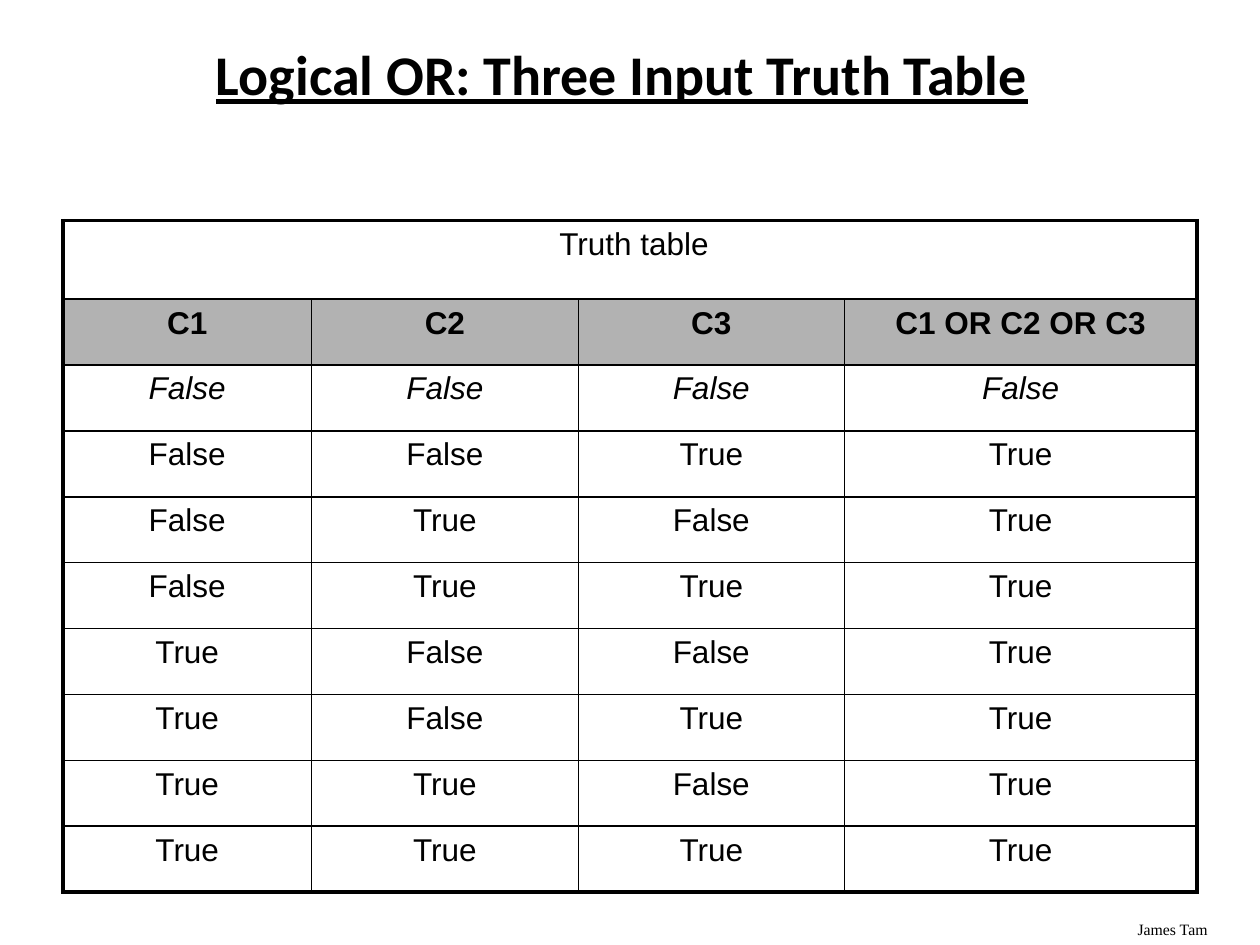
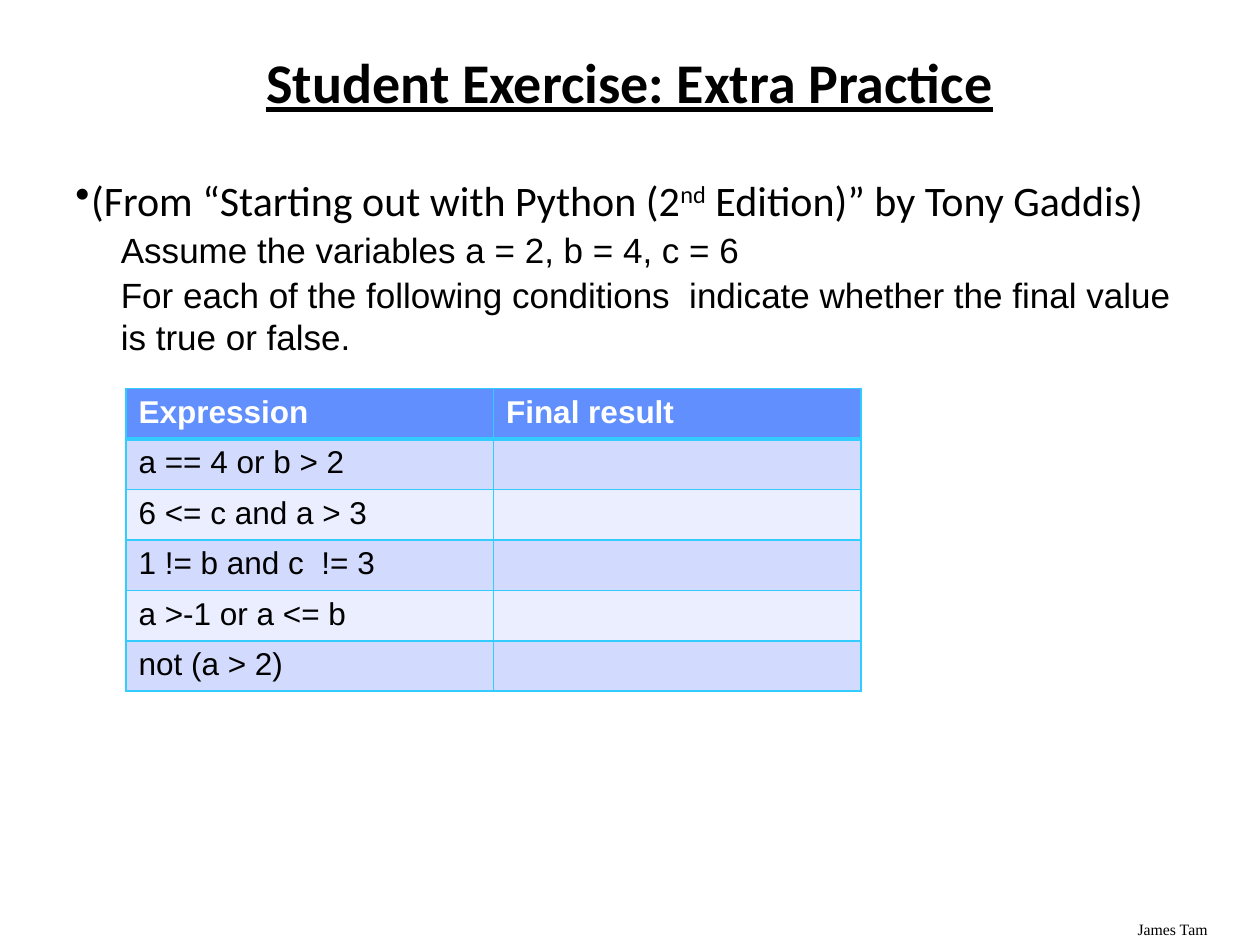
from itertools import product

from lxml.etree import SubElement
from pptx import Presentation
from pptx.dml.color import RGBColor
from pptx.enum.text import MSO_ANCHOR as Anchor, PP_ALIGN as Align
from pptx.oxml.ns import qn
from pptx.util import Pt

BLACK = RGBColor(0x00, 0x00, 0x00)
WHITE = RGBColor(0xFF, 0xFF, 0xFF)
GREY = RGBColor(0xB2, 0xB2, 0xB2)
BLUE = RGBColor(0x61, 0x8F, 0xFD)
DARK_BAND = RGBColor(0xD2, 0xDB, 0xFE)
LIGHT_BAND = RGBColor(0xEA, 0xEE, 0xFF)
CYAN = RGBColor(0x33, 0xCC, 0xFF)


class Deck:
    """Holds the shared style and the slide being built."""

    heading_font = "Calibri"
    text_font = "Arial"
    footer_font = "Times New Roman"

    def __init__(self):
        self.presentation = Presentation()
        self.presentation.slide_width = Pt(720)
        self.presentation.slide_height = Pt(540)
        self.slide = None

    def start_slide(self, title, left, top, width, height):
        blank = self.presentation.slide_layouts[6]
        self.slide = self.presentation.slides.add_slide(blank)
        # Footer
        footer = self.text_box(643, 522, 72, 18)
        self.run(footer.paragraphs[0], "James Tam", self.footer_font, 9)
        # Title
        frame = self.text_box(left, top, width, height)
        frame.vertical_anchor = Anchor.MIDDLE
        paragraph = frame.paragraphs[0]
        paragraph.alignment = Align.CENTER
        paragraph.line_spacing = 0.9
        run = self.run(paragraph, title, self.heading_font, 32, bold=True)
        run.font.underline = True

    def text_box(self, left, top, width, height):
        shape = self.slide.shapes.add_textbox(Pt(left), Pt(top), Pt(width), Pt(height))
        shape.text_frame.word_wrap = True
        return shape.text_frame

    def run(self, paragraph, text, font, size, color=BLACK, bold=False, italic=False):
        run = paragraph.add_run()
        run.text = text
        run.font.name = font
        run.font.size = Pt(size)
        run.font.color.rgb = color
        run.font.bold = bold
        run.font.italic = italic
        return run

    def indent(self, paragraph, margin, first_line=0, bullet=None):
        properties = paragraph._p.get_or_add_pPr()
        properties.set("marL", str(Pt(margin)))
        properties.set("indent", str(Pt(first_line)))
        if bullet:
            SubElement(properties, qn("a:buChar")).set("char", bullet)

    def table(self, left, top, widths, heights):
        frame = self.slide.shapes.add_table(
            len(heights), len(widths), Pt(left), Pt(top), Pt(sum(widths)), Pt(sum(heights)))
        for column, width in zip(frame.table.columns, widths):
            column.width = Pt(width)
        for row, height in zip(frame.table.rows, heights):
            row.height = Pt(height)
        return frame.table

    def cell(self, cell, text, borders, border_color, fill=None, align=Align.LEFT, **style):
        """Fill one cell; borders are the widths left, right, top and bottom."""
        properties = cell._tc.get_or_add_tcPr()
        for side, width in zip("LRTB", borders):
            line = SubElement(properties, qn(f"a:ln{side}"), w=str(Pt(width)))
            solid = SubElement(line, qn("a:solidFill"))
            SubElement(solid, qn("a:srgbClr"), val=str(border_color))
        if fill is None:
            cell.fill.background()
        else:
            cell.fill.solid()
            cell.fill.fore_color.rgb = fill
        paragraph = cell.text_frame.paragraphs[0]
        paragraph.alignment = align
        if text:
            self.run(paragraph, text, self.text_font, 18, **style)


def build_truth_table(deck):
    deck.start_slide("Logical OR: Three Input Truth Table", 34, 24, 643, 41)

    # All combinations of three inputs, with their OR
    rows = [[" Truth table", "", "", ""], ["C1", "C2", "C3", "C1 OR C2 OR C3"]]
    for inputs in product((False, True), repeat=3):
        rows.append([str(value) for value in (*inputs, any(inputs))])

    table = deck.table(36, 126, [142, 152.5, 152, 201.5], [45] + [37.65] * 9)
    table.cell(0, 0).merge(table.cell(0, 3))
    thin, thick = 1, 2.25
    last_row, last_column = len(rows) - 1, 3
    for row, texts in enumerate(rows):
        for column, text in enumerate(texts):
            on_edge = (column == 0, column == last_column or row == 0,
                       row == 0, row == last_row)
            borders = [thick if edge else thin for edge in on_edge]
            deck.cell(table.cell(row, column), text, borders, BLACK,
                      fill=GREY if row == 1 else None, align=Align.CENTER,
                      bold=row == 1, italic=row == 2)


def build_exercise(deck):
    deck.start_slide("Student Exercise: Extra Practice", 36, 20, 648, 58)

    # Instructions
    frame = deck.text_box(36, 96, 648, 168)
    source = frame.paragraphs[0]
    deck.indent(source, 9, -9, "•")
    deck.run(source, "(From “Starting out with Python (2", deck.heading_font, 24)
    ordinal = deck.run(source, "nd", deck.heading_font, 24)
    ordinal.font._element.set("baseline", "30000")
    deck.run(source, " Edition)” by Tony Gaddis)", deck.heading_font, 24)
    for text in ("Assume the variables a = 2, b = 4, c = 6",
                 "For each of the following conditions  indicate whether "
                 "the final value is true or false."):
        paragraph = frame.add_paragraph()
        paragraph.level = 1
        paragraph.space_before = Pt(2)
        deck.indent(paragraph, 26)
        deck.run(paragraph, text, deck.text_font, 20)

    # Expressions with room for the answers
    expressions = ["a == 4 or b > 2", "6 <= c and a > 3", "1 != b and c  != 3",
                   "a >-1 or a <= b", "not (a > 2)"]
    table = deck.table(72, 222, [210] * 2, [28.8] * (len(expressions) + 1))
    for column, heading in enumerate(("Expression", "Final result")):
        deck.cell(table.cell(0, column), heading, (1, 1, 1, 3), CYAN,
                  fill=BLUE, color=WHITE, bold=True)
    for row, expression in enumerate(expressions, 1):
        band = DARK_BAND if row % 2 else LIGHT_BAND
        borders = (1, 1, 3 if row == 1 else 1, 1)
        for column, text in enumerate((expression, "")):
            deck.cell(table.cell(row, column), text, borders, CYAN, fill=band)


def main():
    deck = Deck()
    build_truth_table(deck)
    build_exercise(deck)
    deck.presentation.save("out.pptx")


if __name__ == "__main__":
    main()
